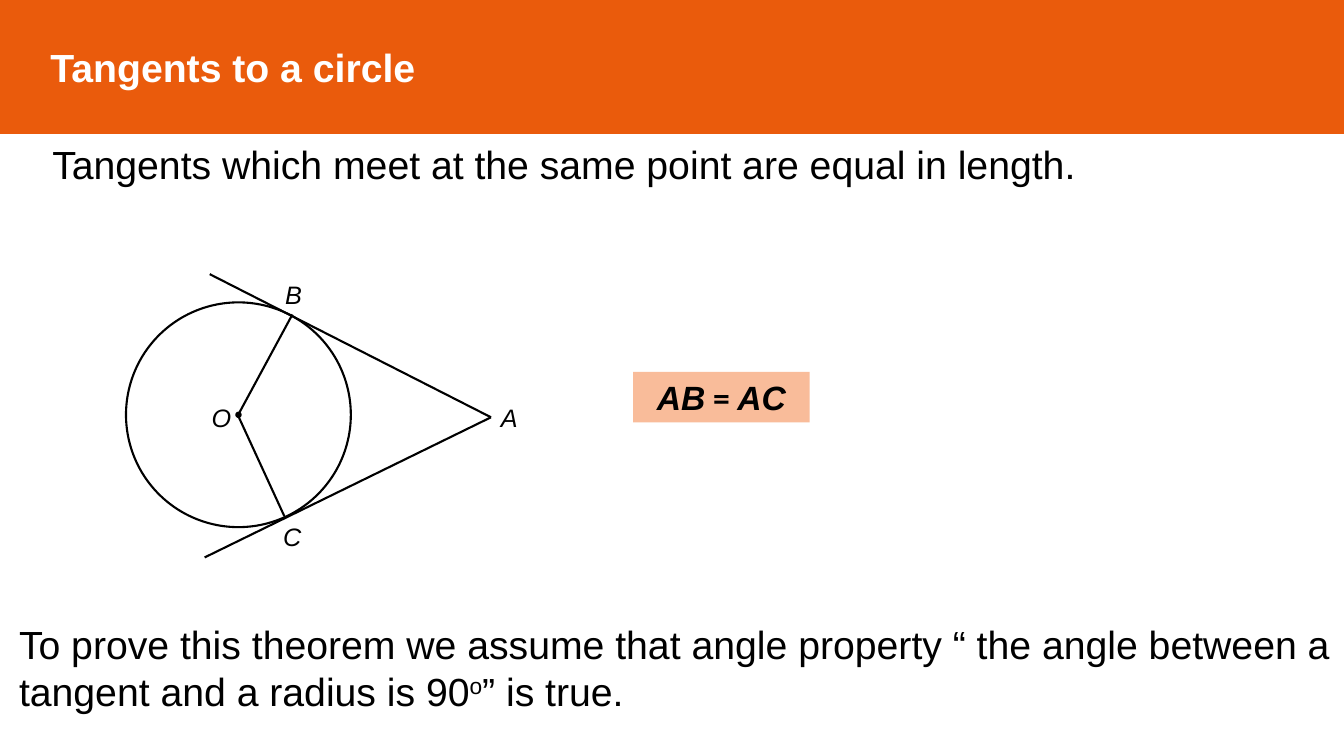
"""Build a slide on the equal tangents drawn to a circle from one point."""
from pptx import Presentation
from pptx.dml.color import RGBColor
from pptx.enum.shapes import MSO_CONNECTOR, MSO_SHAPE
from pptx.enum.text import MSO_ANCHOR, MSO_AUTO_SIZE, PP_ALIGN
from pptx.oxml.ns import qn
from pptx.util import Inches, Pt
from lxml.etree import SubElement


def color(code):
    return RGBColor.from_string(code)


def write(shape, parts, size, code="000000", bold=False, italic=False):
    frame = shape.text_frame
    frame.word_wrap = True
    frame.auto_size = MSO_AUTO_SIZE.NONE
    line = frame.paragraphs[0]
    line.text = parts[0]
    for part in parts[1:]:
        line.add_run().text = part
    for run in line.runs:
        font = run.font
        font.name, font.size = "Arial", Pt(size)
        font.bold, font.italic = bold, italic
        font.color.rgb = color(code)
    return line


deck = Presentation()
deck.slide_width, deck.slide_height = Inches(13.33), Inches(7.5)
slide = deck.slides.add_slide(deck.slide_layouts[5])
shapes = slide.shapes

title = shapes.title
title.left, title.top = Inches(0), Inches(0)
title.width, title.height = Inches(13.33), Inches(1.32)
title.fill.solid()
title.fill.fore_color.rgb = color("EA5B0C")
title.line.color.rgb = color("EA5B0C")
title.line.width = Pt(1)
head = write(title, ["Tangents to a circle"], 28, "FFFFFF", bold=True)
head.alignment = PP_ALIGN.LEFT
title.text_frame.margin_left = Inches(0.5)
title.text_frame.vertical_anchor = MSO_ANCHOR.MIDDLE

claim = shapes.add_textbox(Inches(0.42), Inches(1.34), Inches(12.91), Inches(1.28))
write(claim, ["Tangents which meet at the same point are equal in length."], 28)

result = shapes.add_shape(
    MSO_SHAPE.RECTANGLE, Inches(6.28), Inches(3.69), Inches(1.75), Inches(0.5))
result.shadow.inherit = False
result.fill.solid()
result.fill.fore_color.rgb = color("F9BC9A")
result.line.fill.background()
rule = write(result, ["AB", " = ", "AC"], 24, bold=True, italic=True)
rule.alignment = PP_ALIGN.CENTER
rule.runs[1].font.name = "Calibri"
rule.runs[1].font.italic = False

mid_x, mid_y = 2.365, 4.115
for size, width in [(2.23, 1.5), (0.05, 1)]:
    disc = shapes.add_shape(
        MSO_SHAPE.OVAL, Inches(mid_x - size / 2), Inches(mid_y - size / 2),
        Inches(size), Inches(size))
    disc.shadow.inherit = False
    disc.fill.background()
    disc.line.color.rgb = color("000000")
    disc.line.width = Pt(width)
disc.fill.solid()
disc.fill.fore_color.rgb = color("000000")

apex = (4.87, 4.14)
center = (2.36, 4.12)
for start, end in [
    (apex, (2.08, 2.72)),
    (apex, (2.03, 5.53)),
    ((2.9, 3.12), center),
    (center, (2.82, 5.12)),
]:
    edge = shapes.add_connector(
        MSO_CONNECTOR.STRAIGHT, *map(Inches, start + end))
    edge.line.color.rgb = color("000000")
    edge.line.width = Pt(1.5)
    SubElement(edge._element.spPr, qn("a:effectLst"))

for name, left, top in [
    ("A", 4.87, 3.94), ("B", 2.73, 2.72), ("C", 2.71, 5.12), ("O", 2, 3.94),
]:
    label = shapes.add_textbox(Inches(left), Inches(top), Inches(0.33), Inches(0.4))
    write(label, [name], 18, italic=True)

proof = shapes.add_textbox(Inches(0.09), Inches(6.1), Inches(13.25), Inches(1.4))
note = write(proof, [
    "To prove this theorem we assume that angle property “ the angle between a "
    "tangent and a radius is 90", "o", "” is true."], 28)
note.runs[1]._r.get_or_add_rPr().set("baseline", "30000")

deck.save("out.pptx")
